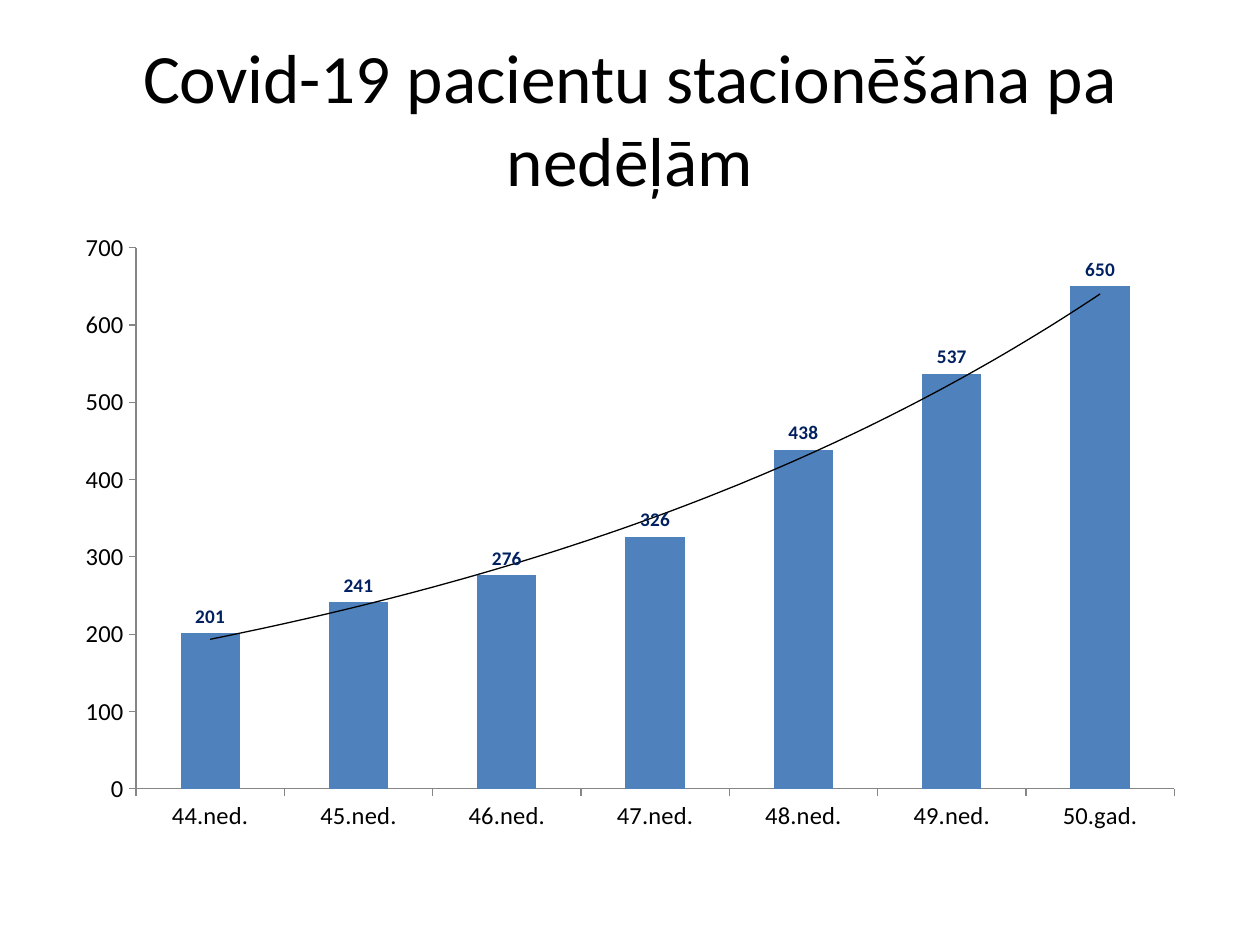
import dataclasses

import lxml.etree
import pptx
import pptx.chart.data
import pptx.dml.color
import pptx.enum.chart
import pptx.enum.text
import pptx.oxml
import pptx.oxml.ns
import pptx.util

EMU_PER_PX = 914400 / 126
TITLE_ONLY = 5


@dataclasses.dataclass(frozen=True)
class Theme:
    font: str = "Calibri"
    text: str = "000000"
    bar: str = "4F81BD"
    label: str = "002060"
    axis: str = "868686"
    title_size: float = 39.6
    axis_size: int = 14
    label_size: int = 11
    chart_size: int = 10


THEME = Theme()
WEEKLY_PATIENTS = {
    "44.ned.": 201,
    "45.ned.": 241,
    "46.ned.": 276,
    "47.ned.": 326,
    "48.ned.": 438,
    "49.ned.": 537,
    "50.gad.": 650,
}


def px(length):
    return pptx.util.Emu(round(length * EMU_PER_PX))


def apply(target, values):
    for name, value in values.items():
        setattr(target, name, value)


def frame(left, top, width, height):
    names = ("left", "top", "width", "height")
    return dict(zip(names, map(px, (left, top, width, height))))


def style_font(font, size, color, bold=False):
    apply(font, {"name": THEME.font, "size": pptx.util.Pt(size), "bold": bold})
    font.color.rgb = pptx.dml.color.RGBColor.from_string(color)


def add_title(page, text, place):
    title = page.shapes.title
    apply(title, place)
    box = title.text_frame
    apply(box, {
        "word_wrap": True,
        "auto_size": pptx.enum.text.MSO_AUTO_SIZE.NONE,
        "vertical_anchor": pptx.enum.text.MSO_ANCHOR.MIDDLE,
    })
    para = box.paragraphs[0]
    para.alignment = pptx.enum.text.PP_ALIGN.CENTER
    span = para.add_run()
    span.text = text
    style_font(span.font, THEME.title_size, THEME.text)


def style_axis(axis):
    apply(axis, {
        "has_major_gridlines": False,
        "major_tick_mark": pptx.enum.chart.XL_TICK_MARK.OUTSIDE,
        "minor_tick_mark": pptx.enum.chart.XL_TICK_MARK.NONE,
    })
    style_font(axis.tick_labels.font, THEME.axis_size, THEME.text)
    line = axis.format.line
    line.width = pptx.util.Pt(0.75)
    line.color.rgb = pptx.dml.color.RGBColor.from_string(THEME.axis)


def add_exponential_trend(series):
    trend = pptx.oxml.parse_xml(
        f'<c:trendline {pptx.oxml.ns.nsdecls("c", "a")}>'
        f'<c:spPr><a:ln w="9525"><a:solidFill><a:srgbClr val="{THEME.text}"/>'
        '</a:solidFill></a:ln></c:spPr>'
        '<c:trendlineType val="exp"/><c:dispRSqr val="0"/><c:dispEq val="0"/>'
        '</c:trendline>'
    )
    series._element.find(pptx.oxml.ns.qn("c:cat")).addprevious(trend)


def style_series(series):
    series.invert_if_negative = False
    fill = series.format.fill
    fill.solid()
    fill.fore_color.rgb = pptx.dml.color.RGBColor.from_string(THEME.bar)
    labels = series.data_labels
    apply(labels, {
        "show_value": True,
        "position": pptx.enum.chart.XL_LABEL_POSITION.OUTSIDE_END,
    })
    style_font(labels.font, THEME.label_size, THEME.label, bold=True)


def add_column_chart(page, values, place):
    data = pptx.chart.data.CategoryChartData()
    data.categories = list(values)
    data.add_series("Series 1", list(values.values()))
    chart = page.shapes.add_chart(
        pptx.enum.chart.XL_CHART_TYPE.COLUMN_CLUSTERED,
        *place.values(),
        data,
    ).chart
    apply(chart, {"has_legend": False, "has_title": False})
    style_font(chart.font, THEME.chart_size, THEME.text)
    for axis in (chart.category_axis, chart.value_axis):
        style_axis(axis)
    apply(chart.value_axis, {
        "minimum_scale": 0, "maximum_scale": 700, "major_unit": 100,
    })
    plot = chart.plots[0]
    apply(plot, {"gap_width": 150, "vary_by_categories": False})
    series = plot.series[0]
    style_series(series)
    add_exponential_trend(series)


def main():
    deck = pptx.Presentation()
    apply(deck, {"slide_width": px(1260), "slide_height": px(945)})
    page = deck.slides.add_slide(deck.slide_layouts[TITLE_ONLY])
    add_title(page, "Covid-19 pacientu stacionēšana pa nedēļām",
              frame(63, 38, 1134, 158))
    add_column_chart(page, WEEKLY_PATIENTS, frame(63, 220, 1134, 624))
    deck.save("out.pptx")


if __name__ == "__main__":
    main()
